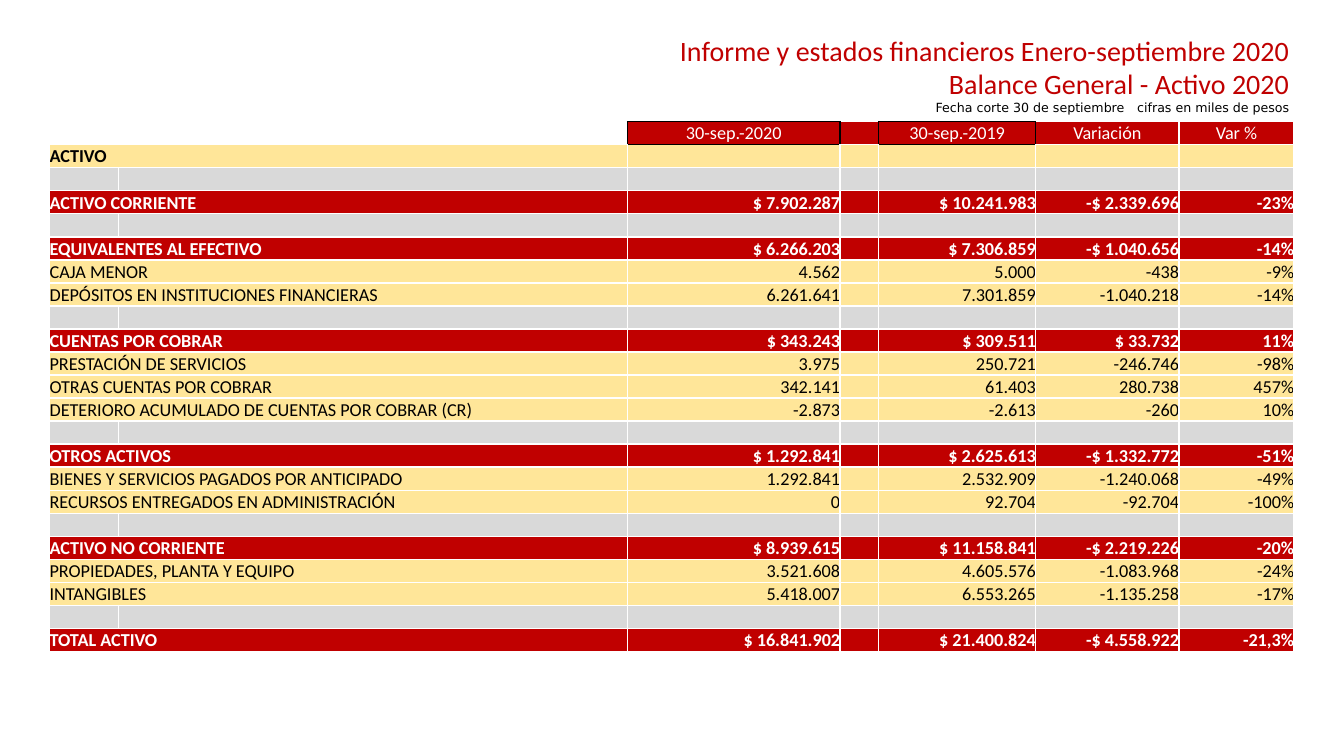
from dataclasses import dataclass

from lxml import etree
from pptx import Presentation
from pptx import util as u
from pptx.dml.color import RGBColor
from pptx.enum import text
from pptx.oxml.ns import qn


@dataclass(frozen=True)
class Theme:
    red: str = "C00000"
    cream: str = "FFE699"
    gray: str = "D9D9D9"
    white: str = "FFFFFF"
    black: str = "000000"
    body_font: str = "Calibri"
    note_font: str = "DejaVu Sans"
    title_size: int = 20
    body_size: int = 13
    note_size: int = 9


THEME = Theme()
ALIGN = text.PP_ALIGN
COLUMN_WIDTHS = [1.73, 12.83, 5.36, 0.97, 3.96, 3.61, 2.9]
ROW_HEIGHT = 0.58
VALUE_COLUMNS = [2, 4, 5, 6]
DATE_COLUMNS = [2, 4]
HEADINGS = ["30-sep.-2020", "30-sep.-2019", "Variación", "Var %"]

ROW_STYLES = {
    "heading": (THEME.red, THEME.white, False),
    "group": (THEME.cream, THEME.black, True),
    "total": (THEME.red, THEME.white, True),
    "detail": (THEME.cream, THEME.black, False),
    "gap": (THEME.gray, THEME.black, False),
}

GAP = ("gap", "")
BALANCE = [
    ("heading", "", *HEADINGS),
    ("group", "ACTIVO"),
    GAP,
    ("total", "ACTIVO CORRIENTE", "$ 7.902.287", "$ 10.241.983", "-$ 2.339.696", "-23%"),
    GAP,
    ("total", "EQUIVALENTES AL EFECTIVO", "$ 6.266.203", "$ 7.306.859", "-$ 1.040.656", "-14%"),
    ("detail", "CAJA MENOR", "4.562", "5.000", "-438", "-9%"),
    ("detail", "DEPÓSITOS EN INSTITUCIONES FINANCIERAS", "6.261.641", "7.301.859", "-1.040.218", "-14%"),
    GAP,
    ("total", "CUENTAS POR COBRAR", "$ 343.243", "$ 309.511", "$ 33.732", "11%"),
    ("detail", "PRESTACIÓN DE SERVICIOS", "3.975", "250.721", "-246.746", "-98%"),
    ("detail", "OTRAS CUENTAS POR COBRAR", "342.141", "61.403", "280.738", "457%"),
    ("detail", "DETERIORO ACUMULADO DE CUENTAS POR COBRAR (CR)", "-2.873", "-2.613", "-260", "10%"),
    GAP,
    ("total", "OTROS ACTIVOS", "$ 1.292.841", "$ 2.625.613", "-$ 1.332.772", "-51%"),
    ("detail", "BIENES Y SERVICIOS PAGADOS POR ANTICIPADO", "1.292.841", "2.532.909", "-1.240.068", "-49%"),
    ("detail", "RECURSOS ENTREGADOS EN ADMINISTRACIÓN", "0", "92.704", "-92.704", "-100%"),
    GAP,
    ("total", "ACTIVO NO CORRIENTE", "$ 8.939.615", "$ 11.158.841", "-$ 2.219.226", "-20%"),
    ("detail", "PROPIEDADES, PLANTA Y EQUIPO", "3.521.608", "4.605.576", "-1.083.968", "-24%"),
    ("detail", "INTANGIBLES", "5.418.007", "6.553.265", "-1.135.258", "-17%"),
    GAP,
    ("total", "TOTAL ACTIVO", "$ 16.841.902", "$ 21.400.824", "-$ 4.558.922", "-21,3%"),
]


def format_paragraph(paragraph, align, font, size, color, bold=False):
    paragraph.alignment = align
    for run in paragraph.runs:
        run.font.name = font
        run.font.size = u.Pt(size)
        run.font.bold = bold
        run.font.color.rgb = RGBColor.from_string(color)


def add_title(slide):
    lines = [
        ("Informe y estados financieros Enero-septiembre 2020",
         THEME.body_font, THEME.title_size, THEME.red),
        ("Balance General - Activo 2020",
         THEME.body_font, THEME.title_size, THEME.red),
        ("Fecha corte 30 de septiembre\tcifras en miles de pesos",
         THEME.note_font, THEME.note_size, THEME.black),
    ]
    title = slide.shapes.add_textbox(u.Cm(6.12), u.Cm(0.71), u.Cm(26.62), u.Cm(2.36))
    frame = title.text_frame
    frame.word_wrap = True
    frame.auto_size = text.MSO_AUTO_SIZE.SHAPE_TO_FIT_TEXT
    frame.text = "\n".join(line[0] for line in lines)
    for paragraph, (_, font, size, color) in zip(frame.paragraphs, lines):
        format_paragraph(paragraph, ALIGN.RIGHT, font, size, color)


def border_colors(row, column):
    is_heading = row == 0
    is_date = column in DATE_COLUMNS
    dark = {
        "lnL": is_heading and (is_date or column - 1 in DATE_COLUMNS),
        "lnR": is_heading and (is_date or column + 1 in DATE_COLUMNS),
        "lnT": row <= 1 and is_date,
        "lnB": is_heading and is_date,
    }
    return {side: THEME.black if on else THEME.white for side, on in dark.items()}


def set_borders(cell, colors):
    properties = cell._tc.get_or_add_tcPr()
    for side, color in colors.items():
        line = etree.SubElement(properties, qn(f"a:{side}"), w=str(u.Pt(1)))
        fill = etree.SubElement(line, qn("a:solidFill"))
        etree.SubElement(fill, qn("a:srgbClr"), val=color)


def fill_cell(cell, content, align, style, borders, filled):
    background, color, bold = style
    set_borders(cell, borders)
    if filled:
        cell.fill.solid()
        cell.fill.fore_color.rgb = RGBColor.from_string(background)
    else:
        cell.fill.background()
    cell.margin_left = cell.margin_right = cell.margin_top = cell.margin_bottom = 0
    cell.vertical_anchor = text.MSO_ANCHOR.BOTTOM
    paragraph = cell.text_frame.paragraphs[0]
    if content:
        paragraph.text = content
        format_paragraph(paragraph, align, THEME.body_font, THEME.body_size, color, bold)
    else:
        etree.SubElement(paragraph._p, qn("a:endParaRPr"), sz=str(THEME.body_size * 100))


def add_balance(slide):
    frame = slide.shapes.add_table(
        len(BALANCE), len(COLUMN_WIDTHS), u.Cm(1.25), u.Cm(3.07),
        u.Cm(sum(COLUMN_WIDTHS)), u.Cm(ROW_HEIGHT * len(BALANCE)))
    balance = frame.table
    balance.first_row = balance.horz_banding = False
    for column, width in zip(balance.columns, COLUMN_WIDTHS):
        column.width = u.Cm(width)
    for row, (kind, account, *values) in enumerate(BALANCE):
        balance.rows[row].height = u.Cm(ROW_HEIGHT)
        contents = {0: account, **dict(zip(VALUE_COLUMNS, values))}
        value_align = ALIGN.CENTER if kind == "heading" else ALIGN.RIGHT
        for column in range(len(COLUMN_WIDTHS)):
            fill_cell(balance.cell(row, column), contents.get(column, ""),
                      value_align if column else ALIGN.LEFT, ROW_STYLES[kind],
                      border_colors(row, column), kind != "heading" or column > 1)
        if account:
            balance.cell(row, 0).merge(balance.cell(row, 1))


def main():
    deck = Presentation()
    deck.slide_width, deck.slide_height = u.Cm(33.87), u.Cm(19.05)
    slide = deck.slides.add_slide(deck.slide_layouts[6])
    add_title(slide)
    add_balance(slide)
    deck.save("out.pptx")


if __name__ == "__main__":
    main()
